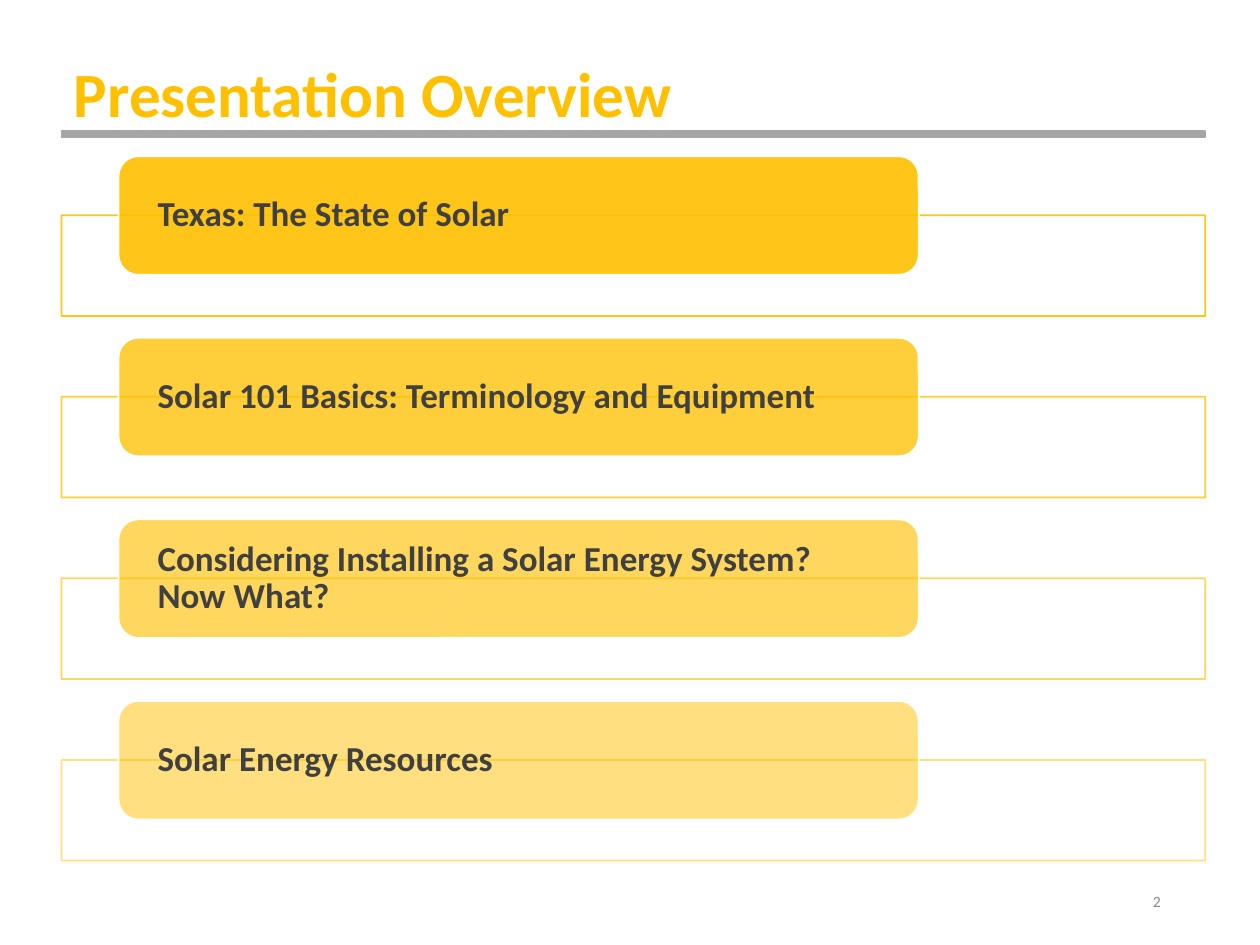
from pptx import Presentation
from pptx.dml.color import RGBColor
from pptx.enum.shapes import MSO_SHAPE as Shape
from pptx.enum.text import MSO_ANCHOR as Anchor, PP_ALIGN as Align
from pptx.oxml.ns import qn
from pptx.util import Cm, Pt
from lxml import etree

GOLD, GRAY, WHITE = "FFC000", "A6A6A6", "FFFFFF"
LEFT, WIDTH = 1.24, 23.06
ROW_PITCH = 3.66
TOPICS = [
    ("Texas: The State of Solar", 90),
    ("Solar 101 Basics: Terminology and Equipment", 77),
    ("Considering Installing a Solar Energy System? Now What?", 63),
    ("Solar Energy Resources", 50),
]


def paint(fill, color, opacity=100):
    """Give a fill a solid colour with an opacity in percent."""
    fill.solid()
    fill.fore_color.rgb = RGBColor.from_string(color)
    if opacity < 100:
        color_xml = fill._xPr.find(qn("a:solidFill"))[0]
        etree.SubElement(color_xml, qn("a:alpha"), val=str(opacity * 1000))


def add_box(slide, kind, box, fill, line, fill_opacity=100, line_opacity=100):
    shape = slide.shapes.add_shape(kind, *map(Cm, box))
    shape.shadow.inherit = False
    paint(shape.fill, fill, fill_opacity)
    shape.line.width = Pt(1)
    paint(shape.line.fill, line, line_opacity)
    return shape


def set_text(shape, text, size, color, anchor, bold=False, align=Align.LEFT, spacing=None):
    frame = shape.text_frame
    frame.text = text
    frame.word_wrap = True
    frame.vertical_anchor = anchor
    paragraph = frame.paragraphs[0]
    paragraph.alignment = align
    paragraph.line_spacing = spacing
    font = paragraph.runs[0].font
    font.name, font.size, font.bold = "Calibri", Pt(size), bold
    font.color.rgb = RGBColor.from_string(color)


def add_label(slide, box, text, size, color, anchor, **style):
    label = slide.shapes.add_textbox(*map(Cm, box))
    set_text(label, text, size, color, anchor, **style)


def add_topic(slide, row, topic, opacity):
    offset = row * ROW_PITCH
    add_box(slide, Shape.RECTANGLE, (LEFT, 4.34 + offset, WIDTH, 2.03),
            WHITE, GOLD, 90, opacity)
    tab = add_box(slide, Shape.ROUNDED_RECTANGLE, (2.39, 3.15 + offset, 16.13, 2.39),
                  GOLD, WHITE, opacity)
    frame = tab.text_frame
    frame.margin_left = frame.margin_right = Cm(0.67)
    frame.margin_top = frame.margin_bottom = 0
    set_text(tab, topic, 20, "404040", Anchor.MIDDLE, bold=True, spacing=0.9)


def main():
    prs = Presentation()
    prs.slide_width, prs.slide_height = Cm(25.4), Cm(19.05)
    slide = prs.slides.add_slide(prs.slide_layouts[6])

    # Slide number
    add_label(slide, (17.93, 17.65, 5.72, 1.02), "2", 9, "8C8C8C",
              Anchor.MIDDLE, align=Align.RIGHT)

    # Title and rule
    add_label(slide, (LEFT, 0.53, 22.86, 2.24), "Presentation Overview", 36, GOLD,
              Anchor.BOTTOM, bold=True, spacing=0.9)
    add_box(slide, Shape.RECTANGLE, (LEFT, 2.64, WIDTH, 0.13), GRAY, GRAY)

    # Topics, fading from top to bottom
    for row, (topic, opacity) in enumerate(TOPICS):
        add_topic(slide, row, topic, opacity)

    prs.save("out.pptx")


if __name__ == "__main__":
    main()
